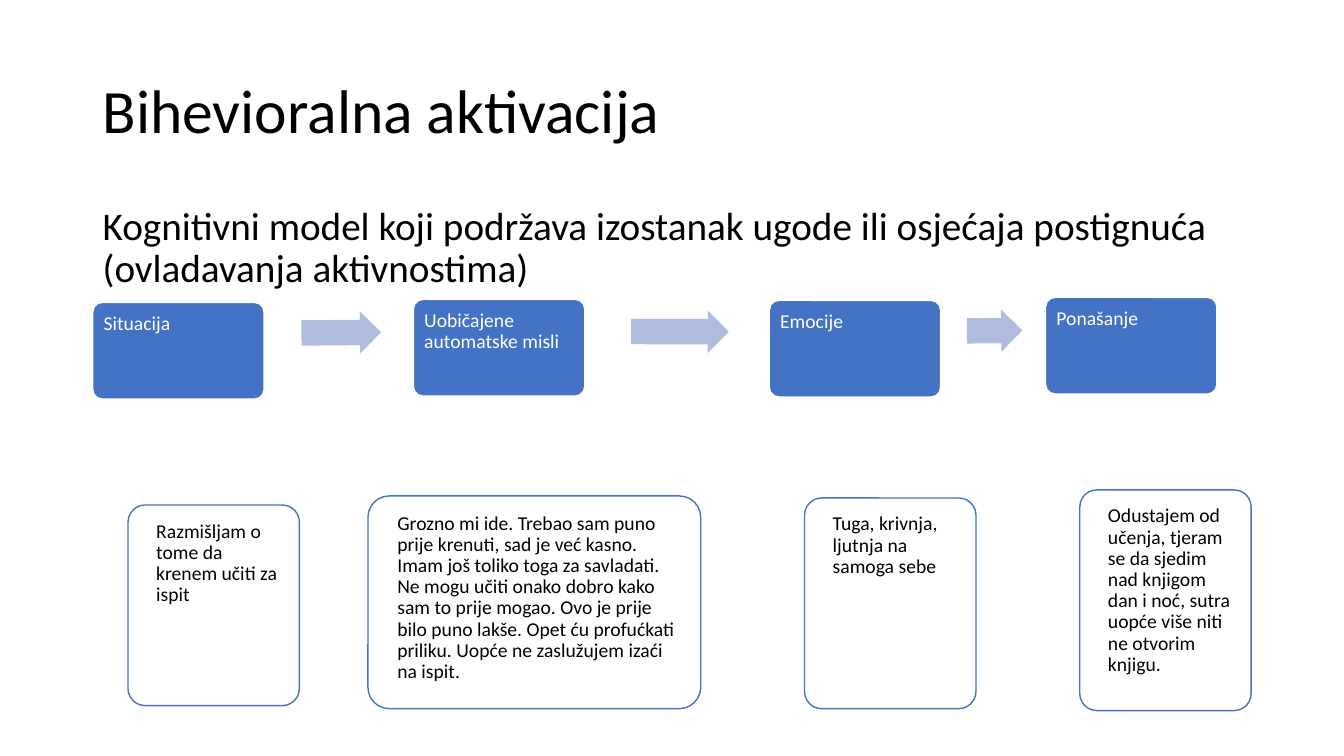
import pptx
import pptx.util
import pptx.dml.color
import pptx.enum.shapes
import pptx.enum.text

Inches = pptx.util.Inches
Pt = pptx.util.Pt
SHAPES = pptx.enum.shapes.MSO_SHAPE
ANCHORS = pptx.enum.text.MSO_ANCHOR

BLUE, PALE_BLUE, WHITE, BLACK = "4472C4", "B0BCDE", "FFFFFF", "000000"
STEP_WIDTH, STEP_HEIGHT = 1.7, 0.96

# Each step: heading, heading (left, top), detail, detail box
STEPS = [
    ("Situacija", (0.92, 3),
     "Razmišljam o tome da krenem učiti za ispit", (1.27, 5.01, 1.7, 1.99)),
    ("Uobičajene automatske misli", (4.1, 2.97),
     "Grozno mi ide. Trebao sam puno prije krenuti, sad je već kasno. "
     "Imam još toliko toga za savladati. Ne mogu učiti onako dobro kako "
     "sam to prije mogao. Ovo je prije bilo puno lakše. Opet ću profućkati "
     "priliku. Uopće ne zaslužujem izaći na ispit.", (3.65, 4.92, 3.3, 2.11)),
    ("Emocije", (7.63, 2.98),
     "Tuga, krivnja, ljutnja na samoga sebe", (7.98, 4.94, 1.7, 2.09)),
    ("Ponašanje", (10.37, 2.95),
     "Odustajem od učenja, tjeram se da sjedim nad knjigom dan i noć, "
     "sutra uopće više niti ne otvorim knjigu.", (10.71, 4.86, 1.7, 2.19)),
]
# Each arrow: box, rotation
ARROWS = [
    ((2.99, 3.09, 0.79, 0.42), 359.5),
    ((6.26, 3.08, 0.97, 0.42), 0.1),
    ((9.59, 3.07, 0.55, 0.42), 359.5),
]


def color(value):
    return pptx.dml.color.RGBColor.from_string(value)


def write(shape, text, size, ink, insets, anchor=ANCHORS.TOP, before=0):
    frame = shape.text_frame
    frame.word_wrap = True
    frame.vertical_anchor = anchor
    (frame.margin_left, frame.margin_top,
     frame.margin_right, frame.margin_bottom) = map(Inches, insets)
    para = frame.paragraphs[0]
    para.text = text
    para.alignment = pptx.enum.text.PP_ALIGN.LEFT
    para.line_spacing = 0.9
    para.space_before = Pt(before)
    para.font.name = "Calibri"
    para.font.size = Pt(size)
    para.font.color.rgb = color(ink)


def add_text(page, box, text, size, **options):
    shape = page.shapes.add_textbox(*map(Inches, box))
    write(shape, text, size, BLACK, (0.1, 0.05, 0.1, 0.05), **options)


def add_panel(page, box, fill, line):
    panel = page.shapes.add_shape(SHAPES.ROUNDED_RECTANGLE, *map(Inches, box))
    panel.shadow.inherit = False
    panel.adjustments[0] = 0.1
    panel.fill.solid()
    panel.fill.fore_color.rgb = color(fill)
    panel.line.color.rgb = color(line)
    panel.line.width = Pt(1)
    return panel


def add_step(page, heading, corner, detail, detail_box):
    heading_panel = add_panel(page, (*corner, STEP_WIDTH, STEP_HEIGHT), BLUE, WHITE)
    write(heading_panel, heading, 14, WHITE, (0.08, 0.08, 0.08, 0.06))
    detail_panel = add_panel(page, detail_box, WHITE, BLUE)
    write(detail_panel, detail, 14, BLACK, (0.23, 0.11, 0.11, 0.11))


def add_arrow(page, box, rotation):
    arrow = page.shapes.add_shape(SHAPES.RIGHT_ARROW, *map(Inches, box))
    arrow.shadow.inherit = False
    arrow.adjustments[0] = 0.6
    arrow.adjustments[1] = 0.5
    arrow.rotation = rotation
    arrow.fill.solid()
    arrow.fill.fore_color.rgb = color(PALE_BLUE)
    arrow.line.fill.background()


def main():
    deck = pptx.Presentation()
    deck.slide_width, deck.slide_height = Inches(13.33), Inches(7.5)
    page = deck.slides.add_slide(deck.slide_layouts[6])

    # Title and introduction
    add_text(page, (0.92, 0.4, 11.5, 1.45), "Bihevioralna aktivacija", 44,
             anchor=ANCHORS.MIDDLE)
    add_text(page, (0.92, 2, 11.5, 0.95),
             "Kognitivni model koji podržava izostanak ugode ili osjećaja "
             "postignuća (ovladavanja aktivnostima)", 28, before=10)

    # Cognitive model
    for step in STEPS:
        add_step(page, *step)
    for box, rotation in ARROWS:
        add_arrow(page, box, rotation)

    deck.save("out.pptx")


if __name__ == "__main__":
    main()
